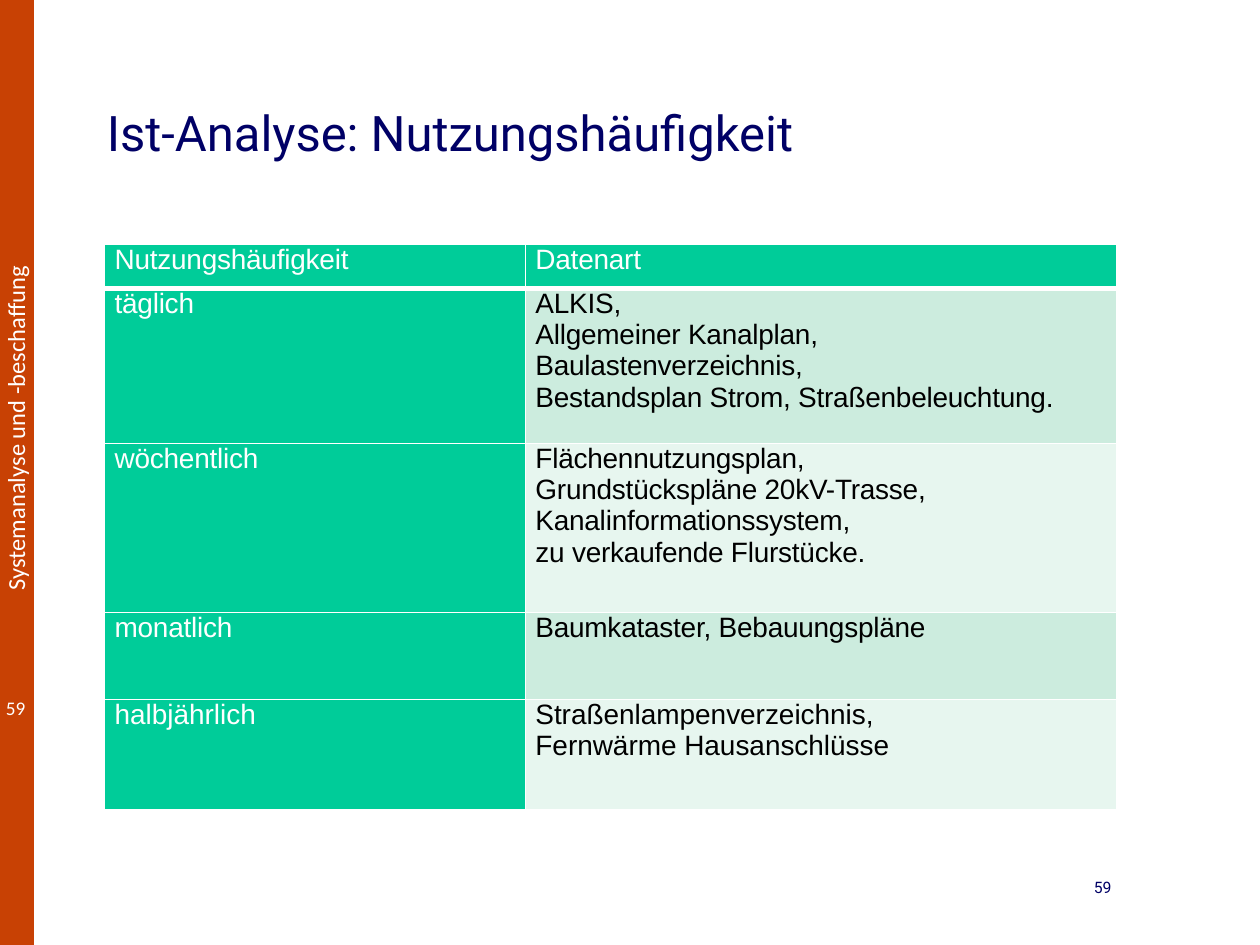
from dataclasses import dataclass

from lxml import etree
from pptx import Presentation
from pptx.dml.color import RGBColor
from pptx.enum.shapes import MSO_SHAPE
from pptx.enum.text import MSO_ANCHOR, PP_ALIGN
from pptx.oxml.ns import qn
from pptx.util import Inches, Pt

RECTANGLE = MSO_SHAPE.RECTANGLE
LEFT, RIGHT = PP_ALIGN.LEFT, PP_ALIGN.RIGHT
TOP, MIDDLE = MSO_ANCHOR.TOP, MSO_ANCHOR.MIDDLE


@dataclass(frozen=True)
class Theme:
    white: str = "FFFFFF"
    black: str = "000000"
    navy: str = "000066"
    sidebar: str = "C84104"
    green: str = "00CC99"
    bands: tuple = ("CCECDE", "E7F6EF")
    title_font: str = "Roboto"
    sidebar_font: str = "Calibri"
    table_font: str = "Arial"
    title_size: float = 28
    course_size: float = 14
    sidebar_number_size: float = 11
    page_number_size: float = 9
    table_size: float = 16


THEME = Theme()
PAGE_NUMBER = "59"

HEADINGS = ("Nutzungshäufigkeit", "Datenart")
USAGE = (
    ("täglich", ("ALKIS,", "Allgemeiner Kanalplan,", "Baulastenverzeichnis,",
                 "Bestandsplan Strom, Straßenbeleuchtung.")),
    ("wöchentlich", ("Flächennutzungsplan,", "Grundstückspläne 20kV-Trasse,",
                     "Kanalinformationssystem,", "zu verkaufende Flurstücke.")),
    ("monatlich", ("Baumkataster, Bebauungspläne",)),
    ("halbjährlich", ("Straßenlampenverzeichnis,", "Fernwärme Hausanschlüsse")),
)
COLUMN_WIDTHS = (3.34, 4.69)
ROW_HEIGHTS = (0.35, 1.23, 1.34, 0.69, 0.88)


def add_run(paragraph, text, font, size, color):
    run = paragraph.add_run()
    run.text = text
    run.font.name = font
    run.font.size = Pt(size)
    run.font.color.rgb = RGBColor.from_string(color)
    return run


def add_label(slide, box, text, font, size, color, align=LEFT, anchor=TOP, wrap=True):
    label = slide.shapes.add_textbox(*map(Inches, box))
    frame = label.text_frame
    frame.word_wrap = wrap
    frame.vertical_anchor = anchor
    paragraph = frame.paragraphs[0]
    paragraph.alignment = align
    add_run(paragraph, text, font, size, color)
    return label


def add_sidebar(slide):
    sidebar = slide.shapes.add_shape(RECTANGLE, 0, 0, Inches(0.27), Inches(7.5))
    sidebar.shadow.inherit = False
    sidebar.fill.solid()
    sidebar.fill.fore_color.rgb = RGBColor.from_string(THEME.sidebar)
    sidebar.line.fill.background()

    course = add_label(slide, (-1.28, 3.21, 2.81, 0.34), "Systemanalyse und -beschaffung",
                       THEME.sidebar_font, THEME.course_size, THEME.white, wrap=False)
    course.rotation = 270
    add_label(slide, (-0.12, 5.48, 0.42, 0.33), PAGE_NUMBER, THEME.sidebar_font,
              THEME.sidebar_number_size, THEME.white, align=RIGHT)


def set_borders(cell, top, bottom):
    """Draw white cell borders; the side borders are 1 pt wide."""
    properties = cell._tc.get_or_add_tcPr()
    for side, width in (("L", 1), ("R", 1), ("T", top), ("B", bottom)):
        line = etree.SubElement(properties, qn(f"a:ln{side}"), w=str(Pt(width)))
        fill = etree.SubElement(line, qn("a:solidFill"))
        etree.SubElement(fill, qn("a:srgbClr"), val=THEME.white)


def fill_cell(cell, lines, fill, color, spacing):
    cell.margin_left = cell.margin_right = Inches(0.08)
    cell.margin_top = cell.margin_bottom = 0
    cell.fill.solid()
    cell.fill.fore_color.rgb = RGBColor.from_string(fill)
    paragraph = cell.text_frame.paragraphs[0]
    paragraph.space_after = Pt(3)
    for index, line in enumerate(lines):
        if index:
            paragraph.add_line_break()
        run = add_run(paragraph, line, THEME.table_font, THEME.table_size, color)
        run.font._element.set("spc", str(spacing))


def add_usage_table(slide):
    rows = [(HEADINGS[0], (HEADINGS[1],)), *USAGE]
    table = slide.shapes.add_table(
        len(rows), len(HEADINGS), Inches(0.83), Inches(1.94),
        Inches(sum(COLUMN_WIDTHS)), Inches(sum(ROW_HEIGHTS))).table
    for column, width in zip(table.columns, COLUMN_WIDTHS):
        column.width = Inches(width)
    for row, height in zip(table.rows, ROW_HEIGHTS):
        row.height = Inches(height)

    for index, (frequency, data_types) in enumerate(rows):
        is_header = index == 0
        spacing = 0 if index == len(rows) - 1 else -10
        frequency_cell, data_cell = table.cell(index, 0), table.cell(index, 1)
        for cell in (frequency_cell, data_cell):
            set_borders(cell, top=3 if index == 1 else 1, bottom=3 if is_header else 1)
        fill_cell(frequency_cell, (frequency,), THEME.green, THEME.white, spacing)
        band = THEME.green if is_header else THEME.bands[(index - 1) % 2]
        fill_cell(data_cell, data_types, band,
                  THEME.white if is_header else THEME.black, spacing)


def main():
    presentation = Presentation()
    presentation.slide_width = Inches(10)
    presentation.slide_height = Inches(7.5)
    slide = presentation.slides.add_slide(presentation.slide_layouts[6])

    # Sidebar with course name and page number
    add_sidebar(slide)
    # Title
    add_label(slide, (0.75, 0.67, 8.18, 0.75), "Ist-Analyse: Nutzungshäufigkeit",
              THEME.title_font, THEME.title_size, THEME.navy, anchor=MIDDLE)
    # Data types by frequency of use
    add_usage_table(slide)
    # Footer page number
    add_label(slide, (6.92, 6.92, 2, 0.42), PAGE_NUMBER, THEME.title_font,
              THEME.page_number_size, THEME.navy, align=RIGHT)

    presentation.save("out.pptx")


if __name__ == "__main__":
    main()
